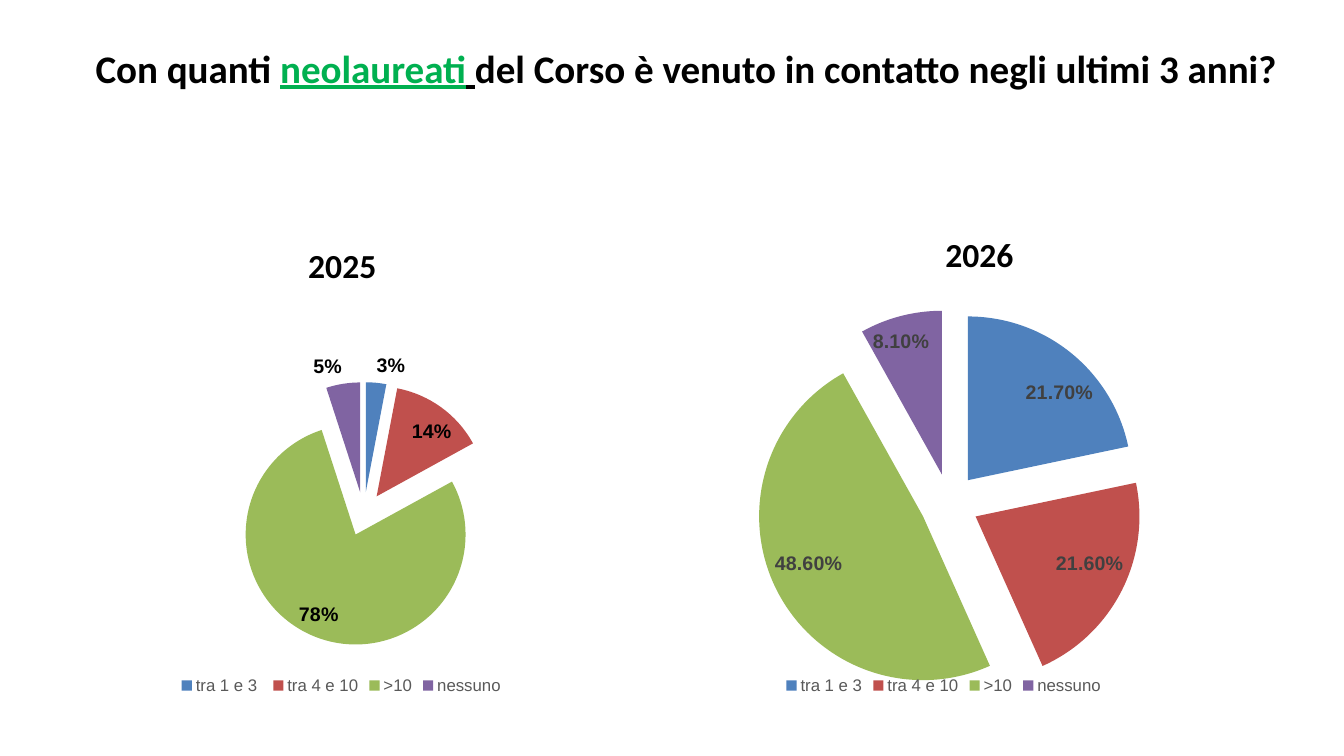
from pptx import Presentation
from pptx.chart.data import CategoryChartData as Data
from pptx.dml.color import RGBColor
from pptx.enum.chart import XL_CHART_TYPE as Kind, XL_LABEL_POSITION as Spot, XL_LEGEND_POSITION as Side
from pptx.enum.text import MSO_ANCHOR as Anchor, MSO_AUTO_SIZE as Fit, PP_ALIGN as Align
from pptx.oxml import parse_xml
from pptx.oxml.ns import nsdecls
from pptx.util import Inches, Pt


def style(font, name, size, color, bold=False):
    font.name, font.size, font.bold = name, Pt(size), bold
    font.color.rgb = RGBColor.from_string(color)


def place(shape, box, anchor):
    shape.left, shape.top, shape.width, shape.height = map(Inches, box)
    frame = shape.text_frame
    frame.margin_left = frame.margin_right = frame.margin_top = frame.margin_bottom = 0
    frame.vertical_anchor, frame.word_wrap, frame.auto_size = anchor, True, Fit.NONE
    para = frame.paragraphs[0]
    para.alignment, para.space_before = Align.CENTER, Pt(0)
    return para


deck = Presentation()
deck.slide_width, deck.slide_height = Inches(13.33), Inches(7.5)
slide = deck.slides.add_slide(deck.slide_layouts[4])
holders = {h.placeholder_format.idx: h for h in slide.placeholders}
for idx in (2, 4):
    spare = holders[idx].element
    spare.getparent().remove(spare)

title = place(holders[0], (0.94, 0.44, 11.73, 1.25), Anchor.TOP)
style(title.font, "Calibri", 27.9, "000000", True)
for text, color, under in [
    ("Con quanti ", "000000", False),
    ("neolaureati", "00B050", True),
    (" ", "000000", True),
    ("del Corso è venuto in contatto negli ultimi 3 anni?", "000000", False),
]:
    run = title.add_run()
    run.text = text
    run.font.color.rgb = RGBColor.from_string(color)
    run.font.underline = under

colors = ["4F81BD", "C0504D", "9BBB59", "8064A2"]
pies = [
    (1, "2025", (0.45, 2.43, 5.89, 0.4), (0.37, 3.08, 6.03, 3.85), "tra 1 e 3 ",
     (0.03, 0.14, 0.78, 0.05), "0%", "000000", 20, (0.13, 0.185, 0.814, 0.68)),
    (3, "2026", (6.77, 2.32, 5.89, 0.4), (6.25, 1.91, 6.22, 5.02), "tra 1 e 3",
     (0.217, 0.216, 0.486, 0.081), "0.00%", "404040", 18, (0.096, 0.232, 0.826, 0.764)),
]
for idx, year, head, box, first, vals, form, ink, gap, area in pies:
    para = place(holders[idx], head, Anchor.BOTTOM)
    para.text = year
    style(para.font, "Calibri", 24, "000000", True)

    data = Data(number_format=form)
    data.categories = [first, "tra 4 e 10", ">10", "nessuno"]
    data.add_series("Series 1", vals)
    chart = slide.shapes.add_chart(Kind.PIE, *map(Inches, box), data).chart
    style(chart.font, "Arial", 10, "000000")
    chart.has_title = False
    chart.has_legend = True
    chart.legend.position = Side.BOTTOM
    chart.legend.include_in_layout = False
    style(chart.legend.font, "Arial", 12, "595959")

    plot = chart.plots[0]
    plot.vary_by_categories = True
    pie = plot.series[0]
    for num, color in enumerate(colors):
        fill = pie.points[num].format.fill
        fill.solid()
        fill.fore_color.rgb = RGBColor.from_string(color)
    labels = pie.data_labels
    labels.show_value = True
    labels.position = Spot.BEST_FIT
    labels.number_format, labels.number_format_is_linked = form, False
    style(labels.font, "Arial", 14, ink, True)

    burst = parse_xml(f'<c:explosion {nsdecls("c")} val="{gap}"/>')
    chart.element.xpath(".//c:dPt")[0].addprevious(burst)
    region = chart.element.xpath(".//c:plotArea")[0]
    for old in region.xpath("./c:layout"):
        region.remove(old)
    parts = "".join(f'<c:{tag} val="{val}"/>' for tag, val in zip("xywh", area))
    region.insert(0, parse_xml(
        f'<c:layout {nsdecls("c")}><c:manualLayout><c:layoutTarget val="inner"/>'
        f'<c:xMode val="edge"/><c:yMode val="edge"/>{parts}</c:manualLayout></c:layout>'))

deck.save("out.pptx")
